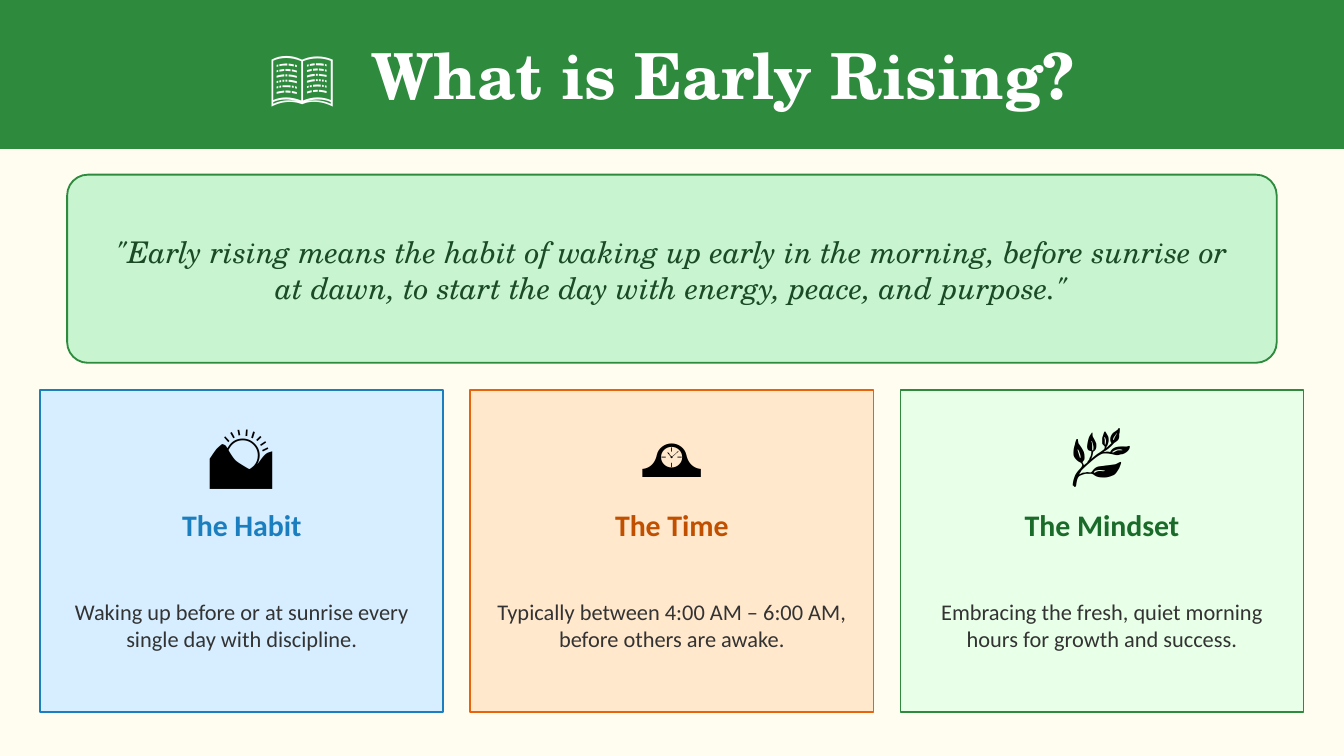
from pptx import Presentation
from pptx.dml.color import RGBColor
from pptx.enum.shapes import MSO_SHAPE
from pptx.enum.text import MSO_ANCHOR, MSO_AUTO_SIZE, PP_ALIGN
from pptx.util import Inches, Pt

TITLE = "📖  What is Early Rising?"
QUOTE = (
    '"Early rising means the habit of waking up early in the morning, before sunrise or '
    'at dawn, to start the day with energy, peace, and purpose."'
)
CARDS = [
    dict(icon="🌄", heading="The Habit", fill="D6EEFF", border="1B7FBF", accent="1B7FBF",
         body="Waking up before or at sunrise every single day with discipline."),
    dict(icon="🕰️", heading="The Time", fill="FFE8CC", border="E8630A", accent="C05000",
         body="Typically between 4:00 AM – 6:00 AM, before others are awake."),
    dict(icon="🌿", heading="The Mindset", fill="E8FFE8", border="2E8B3E", accent="1A6B2A",
         body="Embracing the fresh, quiet morning hours for growth and success."),
]

GREEN = "2E8B3E"
SERIF, SANS = "TeX Gyre Schola", "Calibri"
STYLES = {
    "title": dict(name=SERIF, size=Pt(34), bold=True),
    "quote": dict(name=SERIF, size=Pt(16), italic=True),
    "icon": dict(name=SANS, size=Pt(36)),
    "heading": dict(name=SANS, size=Pt(16), bold=True),
    "body": dict(name=SANS, size=Pt(12)),
}
SLIDE_WIDTH = Inches(10)
SLIDE_HEIGHT = SLIDE_WIDTH * 9 // 16
MARGIN, CARD_TOP, CARD_WIDTH, CARD_HEIGHT, CARD_GAP = 0.3, 2.9, 3, 2.4, 0.2


def color(hex_value):
    return RGBColor.from_string(hex_value)


def add_panel(slide, kind, box, fill, border):
    panel = slide.shapes.add_shape(kind, *map(Inches, box))
    panel.shadow.inherit = False
    panel.fill.solid()
    panel.fill.fore_color.rgb = color(fill)
    panel.line.color.rgb = color(border)
    panel.line.width = Pt(1)
    return panel


def write(holder, text, style, text_color):
    """Put one centred, styled paragraph into a text box or placeholder."""
    frame = holder.text_frame
    frame.word_wrap = True
    frame.auto_size = MSO_AUTO_SIZE.NONE
    frame.vertical_anchor = MSO_ANCHOR.MIDDLE
    paragraph = frame.paragraphs[0]
    paragraph.alignment = PP_ALIGN.CENTER
    run = paragraph.add_run()
    run.text = text
    for attribute, value in STYLES[style].items():
        setattr(run.font, attribute, value)
    run.font.color.rgb = color(text_color)


def add_text(slide, box, text, style, text_color):
    write(slide.shapes.add_textbox(*map(Inches, box)), text, style, text_color)


def add_header(slide):
    add_panel(slide, MSO_SHAPE.RECTANGLE, (0, 0, 10, 1.1), GREEN, GREEN)
    title = slide.shapes.title
    title.left, title.top, title.width, title.height = map(Inches, (0.3, 0.1, 9.4, 0.9))
    write(title, TITLE, "title", "FFFFFF")
    # Bring the title in front of the header band
    title.element.getparent().append(title.element)


def add_quote(slide):
    panel = add_panel(slide, MSO_SHAPE.ROUNDED_RECTANGLE, (0.5, 1.3, 9, 1.4), "C8F5D0", GREEN)
    panel.adjustments[0] = 0.11
    add_text(slide, (0.75, 1.38, 8.5, 1.25), QUOTE, "quote", "1A4A26")


def add_card(slide, left, card):
    add_panel(slide, MSO_SHAPE.RECTANGLE, (left, CARD_TOP, CARD_WIDTH, CARD_HEIGHT),
              card["fill"], card["border"])
    rows = [("icon", 0.1, 0.7, 0, "000000"),
            ("heading", 0.8, 0.4, 0, card["accent"]),
            ("body", 1.2, 1.1, 0.1, "333333")]
    for part, offset, height, inset, text_color in rows:
        box = (left + inset, CARD_TOP + offset, CARD_WIDTH - 2 * inset, height)
        add_text(slide, box, card[part], part, text_color)


def main():
    presentation = Presentation()
    presentation.slide_width, presentation.slide_height = SLIDE_WIDTH, SLIDE_HEIGHT
    slide = presentation.slides.add_slide(presentation.slide_layouts[5])
    slide.background.fill.solid()
    slide.background.fill.fore_color.rgb = color("FFFDF0")

    add_header(slide)
    add_quote(slide)
    for index, card in enumerate(CARDS):
        add_card(slide, MARGIN + index * (CARD_WIDTH + CARD_GAP), card)
    presentation.save("out.pptx")


if __name__ == "__main__":
    main()
